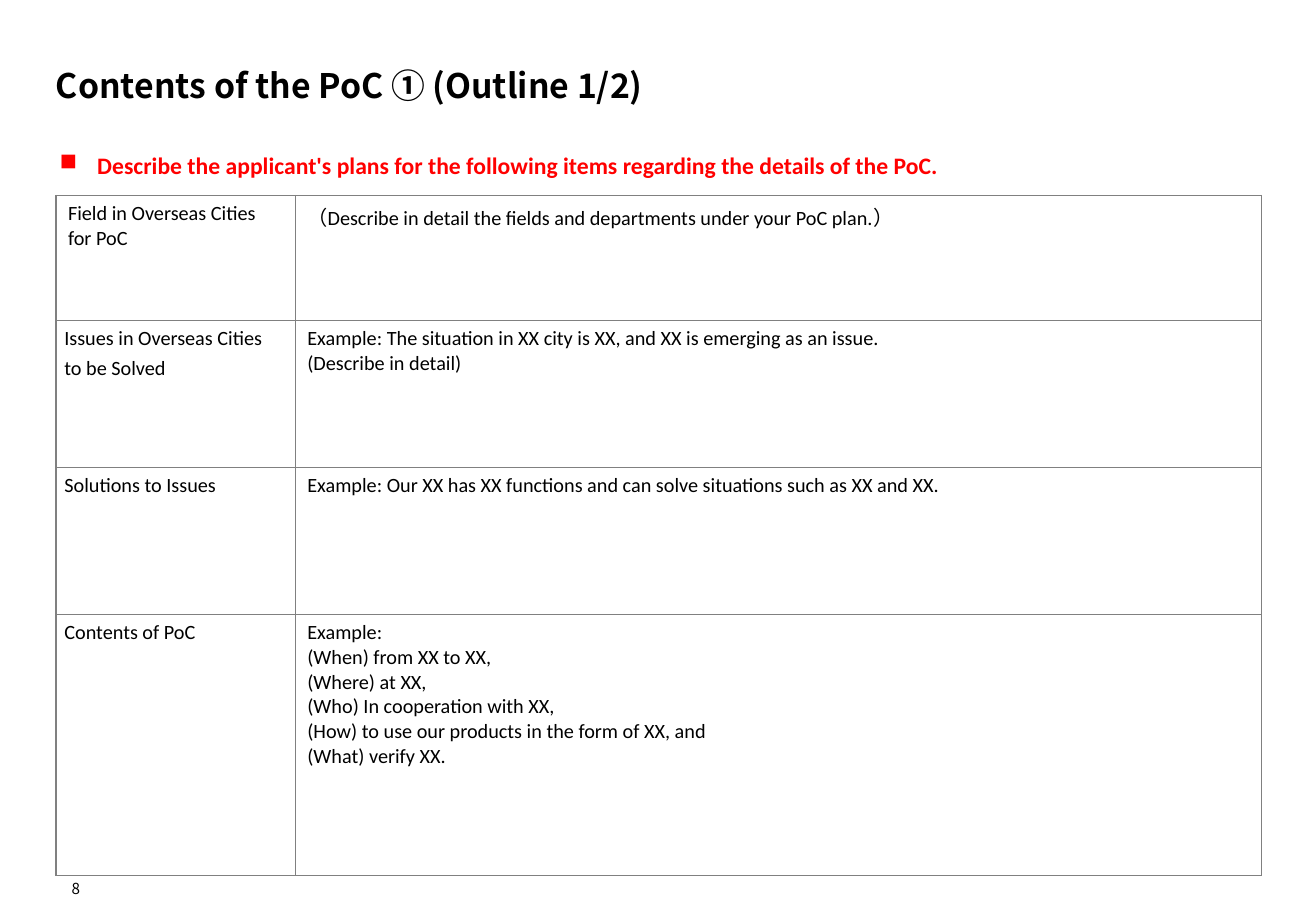
from lxml.etree import SubElement
from pptx import Presentation
from pptx.dml.color import RGBColor
from pptx.enum.text import MSO_ANCHOR, PP_ALIGN
from pptx.oxml.ns import qn
from pptx.util import Inches, Pt

COLORS = {"ink": "000000", "note": "FF0000", "grid": "808080", "paper": "FFFFFF"}
SANS, BODY = "Noto Sans CJK JP", "Calibri"
LABEL = {"alignment": PP_ALIGN.JUSTIFY, "line_spacing": Pt(18)}


class Page:
    def __init__(self, deck):
        self.slide = deck.slides.add_slide(deck.slide_layouts[6])

    def put(self, frame, lines, size, face=BODY, color="ink", bold=False,
            form=None, hang=0, mark=None):
        style = {"size": Pt(size), "name": face, "bold": bold}
        for i, line in enumerate(lines):
            para = frame.paragraphs[0] if i == 0 else frame.add_paragraph()
            for key, val in (form or {}).items():
                setattr(para, key, val)
            props = para._p.get_or_add_pPr()
            if hang:
                props.set("marL", str(Inches(hang)))
                props.set("indent", str(-Inches(hang)))
            if mark:
                SubElement(props, qn("a:buChar")).set("char", mark)
            run = para.add_run()
            run.text = line
            for key, val in style.items():
                setattr(run.font, key, val)
            run.font.color.rgb = RGBColor.from_string(COLORS[color])
            east = SubElement(run._r.get_or_add_rPr(), qn("a:ea"))
            east.set("typeface", SANS)

    def text(self, box, line, size, anchor, inset=0, wrap=True, **style):
        frame = self.slide.shapes.add_textbox(*map(Inches, box)).text_frame
        form = {"word_wrap": wrap, "vertical_anchor": anchor}
        for side in ("left", "top", "right", "bottom"):
            form["margin_" + side] = Inches(inset)
        for key, val in form.items():
            setattr(frame, key, val)
        self.put(frame, [line], size, **style)

    def edge(self, cell):
        props = cell._tc.get_or_add_tcPr()
        for side in ("lnL", "lnR", "lnT", "lnB"):
            line = SubElement(props, qn("a:" + side), w=str(Pt(1)))
            fill = SubElement(line, qn("a:solidFill"))
            SubElement(fill, qn("a:srgbClr"), val=COLORS["grid"])
        cell.fill.solid()
        cell.fill.fore_color.rgb = RGBColor.from_string(COLORS["paper"])

    def table(self, left, top, cols, rows, data):
        box = map(Inches, (left, top, sum(cols), sum(rows)))
        grid = self.slide.shapes.add_table(len(rows), len(cols), *box).table
        grid.first_row = grid.horz_banding = False
        for col, width in zip(grid.columns, cols):
            col.width = Inches(width)
        for r, (row, high) in enumerate(zip(grid.rows, rows)):
            row.height = Inches(high)
            for c, (cell, lines) in enumerate(zip(row.cells, data[r])):
                self.edge(cell)
                # Labels below the first row sit tight with a hanging indent
                tight = c == 0 and r > 0
                if tight:
                    cell.margin_left = cell.margin_right = Inches(0.07)
                    cell.margin_top = cell.margin_bottom = 0
                self.put(cell.text_frame, lines, 12,
                         form=LABEL if tight else None,
                         hang=0.15 if tight else 0)


ITEMS = [
    (["Field in Overseas Cities for PoC"],
     ["（Describe in detail the fields and departments under your PoC plan.）"]),
    (["Issues in Overseas Cities", "to be Solved"],
     ["Example: The situation in XX city is XX, and XX is emerging as an issue.",
      "(Describe in detail)"]),
    (["Solutions to Issues"],
     ["Example: Our XX has XX functions and can solve situations such as XX and XX."]),
    (["Contents of PoC"],
     ["Example:", "(When) from XX to XX,", "(Where) at XX,",
      "(Who) In cooperation with XX,",
      "(How) to use our products in the form of XX, and",
      "(What) verify XX."]),
]


def main():
    deck = Presentation()
    deck.slide_width, deck.slide_height = Inches(10.83), Inches(7.5)
    page = Page(deck)

    # Page number and title
    page.text((0.46, 7.2, 0.2, 0.19), "8", 9, MSO_ANCHOR.BOTTOM, wrap=False,
              face=SANS, form={"alignment": PP_ALIGN.RIGHT})
    page.text((0.46, 0.2, 9.92, 0.67), "Contents of the PoC ① (Outline 1/2)",
              20, MSO_ANCHOR.BOTTOM, face=SANS, bold=True)

    # Table of plan items
    page.table(0.46, 1.61, (1.97, 7.95), (1.03, 1.21, 1.21, 2.15), ITEMS)

    # Instruction
    page.text((0.45, 1.11, 9.92, 0.5),
              "Describe the applicant's plans for the following items "
              "regarding the details of the PoC.",
              14, MSO_ANCHOR.MIDDLE, inset=0.04, color="note", bold=True,
              hang=0.31, mark="■")
    deck.save("out.pptx")


if __name__ == "__main__":
    main()
